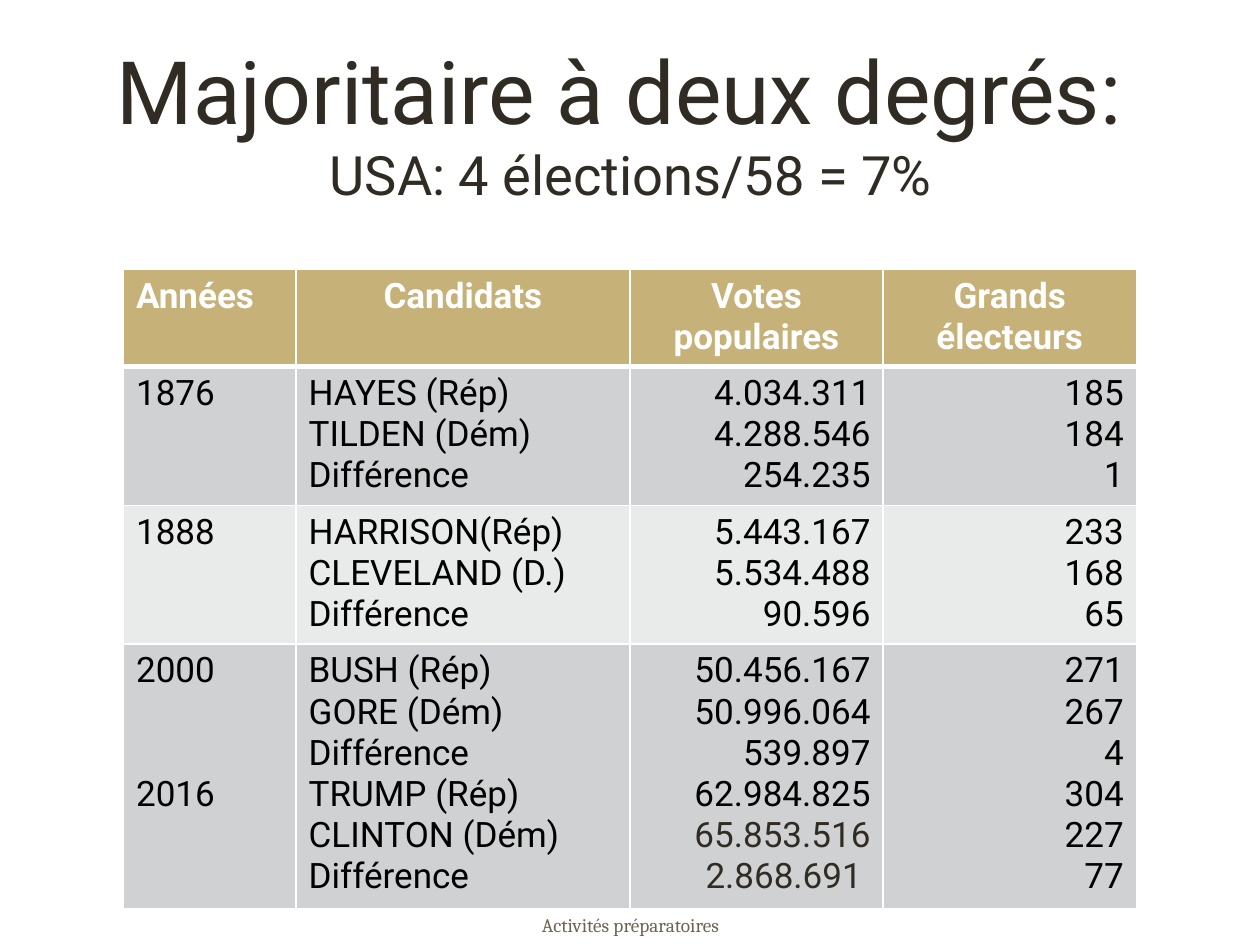
from lxml.etree import SubElement
from pptx import Presentation
from pptx.dml.color import RGBColor as RGB
from pptx.enum.text import MSO_ANCHOR as ANCHOR, PP_ALIGN as ALIGN
from pptx.oxml.ns import qn
from pptx.util import Inches, Pt

COLORS = {"title": "302C24", "header": "C6B178", "odd": "D0D1D2", "even": "E9EAEA",
          "white": "FFFFFF", "black": "000000", "footer": "6D6452"}
FONT = "Roboto"
COLS = [1.37, 2.65, 2.01, 2.01]
ROWS = [0.77, 1.1, 1.1, 2.05]
HEADER = ["Années", "Candidats", "Votes populaires", "Grands électeurs"]
LEFT_COLS = 2
ELECTIONS = [
    [["1876"], ["HAYES (Rép)", "TILDEN (Dém)", "Différence"],
     ["4.034.311", "4.288.546", "254.235"], ["185", "184", "1"]],
    [["1888"], ["HARRISON(Rép)", "CLEVELAND (D.)", "Différence"],
     ["5.443.167", "5.534.488", "90.596"], ["233", "168", "65"]],
    [["2000", "2016"],
     ["BUSH (Rép)", "GORE (Dém)", "Différence", "TRUMP (Rép)", "CLINTON (Dém)", "Différence"],
     ["50.456.167", "50.996.064", "539.897", "62.984.825", "65.853.516", "2.868.691 "],
     ["271", "267", "4", "304", "227", "77"]],
]
DARK_VOTES = {"65.853.516", "2.868.691 "}
YEAR_GAP = Pt(47)


def style_run(r, color, **fmt):
    """Apply font attributes and a named colour to a run."""
    for name, value in fmt.items():
        setattr(r.font, name, value)
    r.font.color.rgb = RGB.from_string(COLORS[color])


def add_box(s, box, anchor):
    """Add a wrapping text box and return its first, centred paragraph."""
    tf = s.shapes.add_textbox(*map(Inches, box)).text_frame
    tf.word_wrap = True
    tf.vertical_anchor = anchor
    p = tf.paragraphs[0]
    p.alignment = ALIGN.CENTER
    return p


def add_title(s, box):
    """Place the two-line heading."""
    p = add_box(s, box, ANCHOR.BOTTOM)
    r = p.add_run()
    r.text = "Majoritaire à deux degrés: "
    style_run(r, "title", name=FONT, size=Pt(50))
    p.add_line_break()
    r = p.add_run()
    r.text = "USA: 4 élections/58 = 7%"
    style_run(r, "title", name=FONT, size=Pt(31))


def add_footer(s, box):
    """Place the footer line."""
    r = add_box(s, box, ANCHOR.MIDDLE).add_run()
    r.text = "Activités préparatoires"
    style_run(r, "footer", name="Cambria", size=Pt(11))


def set_borders(cell, top, bottom):
    """Draw white borders of the given widths in points around a cell."""
    tc_pr = cell._tc.get_or_add_tcPr()
    for i, (side, width) in enumerate([("L", 1), ("R", 1), ("T", top), ("B", bottom)]):
        ln = SubElement(tc_pr, qn(f"a:ln{side}"), w=str(Pt(width)))
        tc_pr.insert(i, ln)
        fill = SubElement(ln, qn("a:solidFill"))
        SubElement(fill, qn("a:srgbClr"), val=COLORS["white"])


def fill_cell(cell, lines, fill, align, color, bold):
    """Write one paragraph per line into a filled cell."""
    cell.fill.solid()
    cell.fill.fore_color.rgb = RGB.from_string(COLORS[fill])
    tf = cell.text_frame
    for i, line in enumerate(lines):
        p = tf.add_paragraph() if i else tf.paragraphs[0]
        p.alignment = align
        r = p.add_run()
        r.text = line
        style_run(r, "title" if line in DARK_VOTES else color,
                  name=FONT, size=Pt(20), bold=bold)


def add_results(s, box):
    """Place the table of elections."""
    rows = [[[name] for name in HEADER]] + ELECTIONS
    table = s.shapes.add_table(len(rows), len(COLS), *map(Inches, box)).table
    for col, width in zip(table.columns, COLS):
        col.width = Inches(width)
    for row, height in zip(table.rows, ROWS):
        row.height = Inches(height)
    for i, row in enumerate(rows):
        for j, lines in enumerate(row):
            cell = table.cell(i, j)
            if i == 0:
                align = ALIGN.CENTER if j else ALIGN.LEFT
                fill_cell(cell, lines, "header", align, "white", True)
            else:
                align = ALIGN.LEFT if j < LEFT_COLS else ALIGN.RIGHT
                fill_cell(cell, lines, "odd" if i % 2 else "even", align, "black", False)
            set_borders(cell, 3 if i == 1 else 1, 3 if i == 0 else 1)
    table.cell(3, 0).text_frame.paragraphs[1].space_before = YEAR_GAP


def main():
    """Build and save the slide."""
    prs = Presentation()
    prs.slide_width, prs.slide_height = Inches(10), Inches(7.5)
    s = prs.slides.add_slide(prs.slide_layouts[6])
    add_title(s, (0.55, 0.1, 8.91, 1.59))
    add_results(s, (0.98, 2.14, sum(COLS), sum(ROWS)))
    add_footer(s, (3.42, 7.19, 3.17, 0.3))
    prs.save("out.pptx")


if __name__ == "__main__":
    main()
